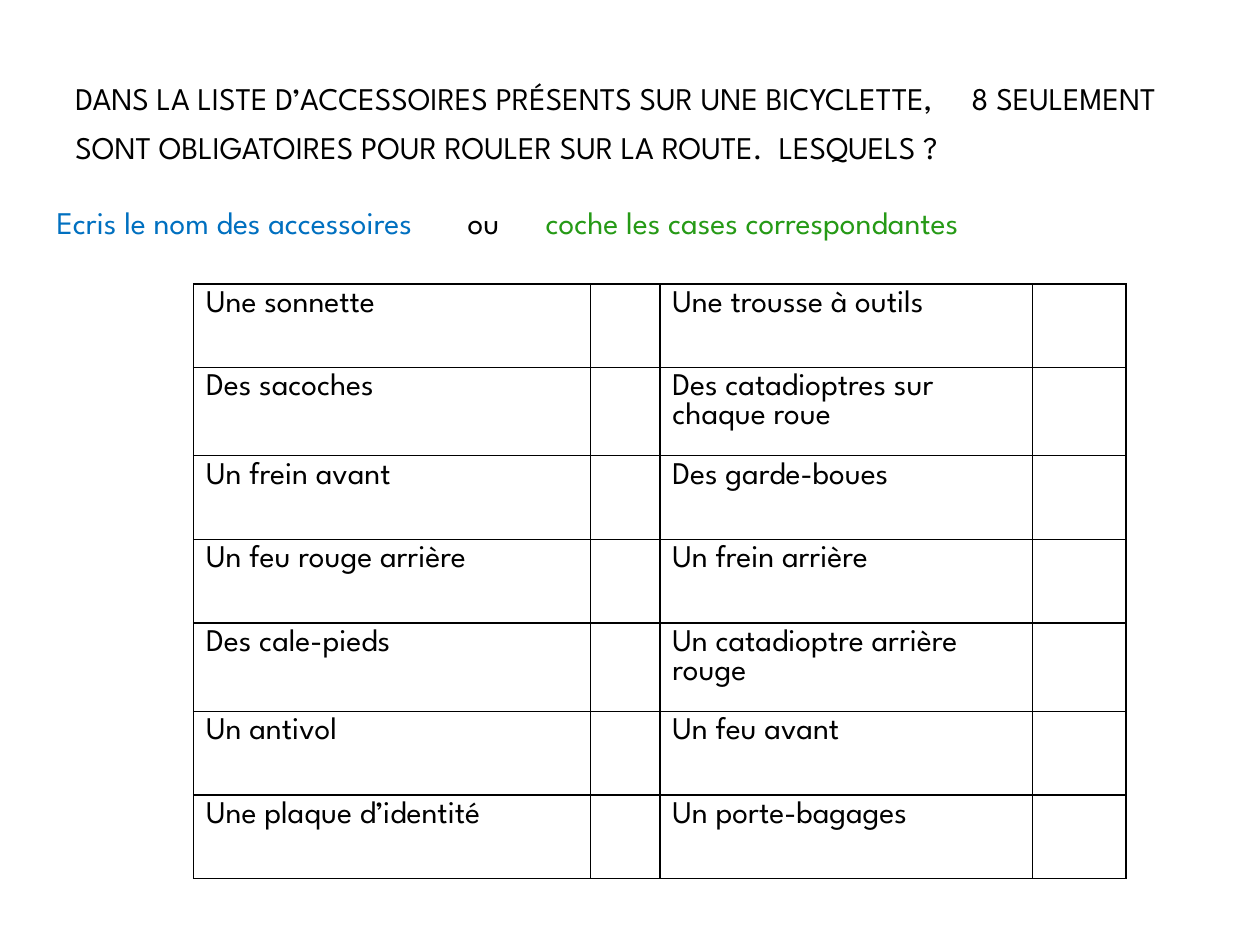
from lxml import etree
from pptx import Presentation
from pptx.dml.color import RGBColor
from pptx.enum import text
from pptx.oxml import ns
from pptx.util import Pt

BLACK = RGBColor(0x00, 0x00, 0x00)
BLUE = RGBColor(0x00, 0x70, 0xC0)
GREEN = RGBColor(0x26, 0x9A, 0x16)
FONT = {"name": "League Spartan", "size": Pt(18)}

ACCESSORIES = [
    ("Une sonnette", "Une trousse à outils"),
    ("Des sacoches", "Des catadioptres sur chaque roue"),
    ("Un frein avant", "Des garde-boues"),
    ("Un feu rouge arrière", "Un frein arrière"),
    ("Des cale-pieds", "Un catadioptre arrière rouge"),
    ("Un antivol", "Un feu avant"),
    ("Une plaque d’identité", "Un porte-bagages"),
]
TEXTS = [
    # box, anchor, tab stops, runs
    ((36, 21.6, 648, 90), text.MSO_ANCHOR.MIDDLE, (402, 512),
     [("DANS LA LISTE D’ACCESSOIRES PRÉSENTS SUR UNE BICYCLETTE,\t8 SEULEMENT "
       "SONT OBLIGATOIRES POUR ROULER SUR LA ROUTE.\tLESQUELS ?", BLACK)]),
    ((25.2, 105.84, 663.84, 36), text.MSO_ANCHOR.TOP, (235, 279.5),
     [("Ecris le nom des accessoires\t", BLUE), ("ou\t", BLACK),
      ("coche les cases correspondantes", GREEN)]),
]


def add_run(p, words, color):
    r = p.add_run()
    r.text = words
    for name, value in FONT.items():
        setattr(r.font, name, value)
    r.font.color.rgb = color


def add_borders(cell):
    tc_pr = cell._tc.get_or_add_tcPr()
    for i, side in enumerate(("lnL", "lnR", "lnT", "lnB")):
        ln = etree.Element(ns.qn(f"a:{side}"), w=str(Pt(1)))
        fill = etree.SubElement(ln, ns.qn("a:solidFill"))
        etree.SubElement(fill, ns.qn("a:srgbClr"), val=str(BLACK))
        tc_pr.insert(i, ln)


prs = Presentation()
prs.slide_width, prs.slide_height = Pt(720), Pt(540)
s = prs.slides.add_slide(prs.slide_layouts[6])

for box, anchor, stops, runs in TEXTS:
    tf = s.shapes.add_textbox(*map(Pt, box)).text_frame
    tf.word_wrap = True
    tf.vertical_anchor = anchor
    p = tf.paragraphs[0]
    p.line_spacing = 1.31
    tabs = etree.SubElement(p._p.get_or_add_pPr(), ns.qn("a:tabLst"))
    for stop in stops:
        etree.SubElement(tabs, ns.qn("a:tab"), pos=str(Pt(stop)), algn="l")
    for words, color in runs:
        add_run(p, words, color)

widths = (226.8, 39.6, 213.12, 53.28)
row_height = 47.8
rows = len(ACCESSORIES)
table = s.shapes.add_table(rows, len(widths), Pt(110.6), Pt(162.2),
                           Pt(sum(widths)), Pt(rows * row_height)).table
table.first_row = table.horz_banding = False
for column, width in zip(table.columns, widths):
    column.width = Pt(width)
for row, (left, right) in zip(table.rows, ACCESSORIES):
    row.height = Pt(row_height)
    for cell, words in zip(row.cells, (left, "", right, "")):
        cell.fill.background()
        add_borders(cell)
        if words:
            add_run(cell.text_frame.paragraphs[0], words, BLACK)

prs.save("out.pptx")
